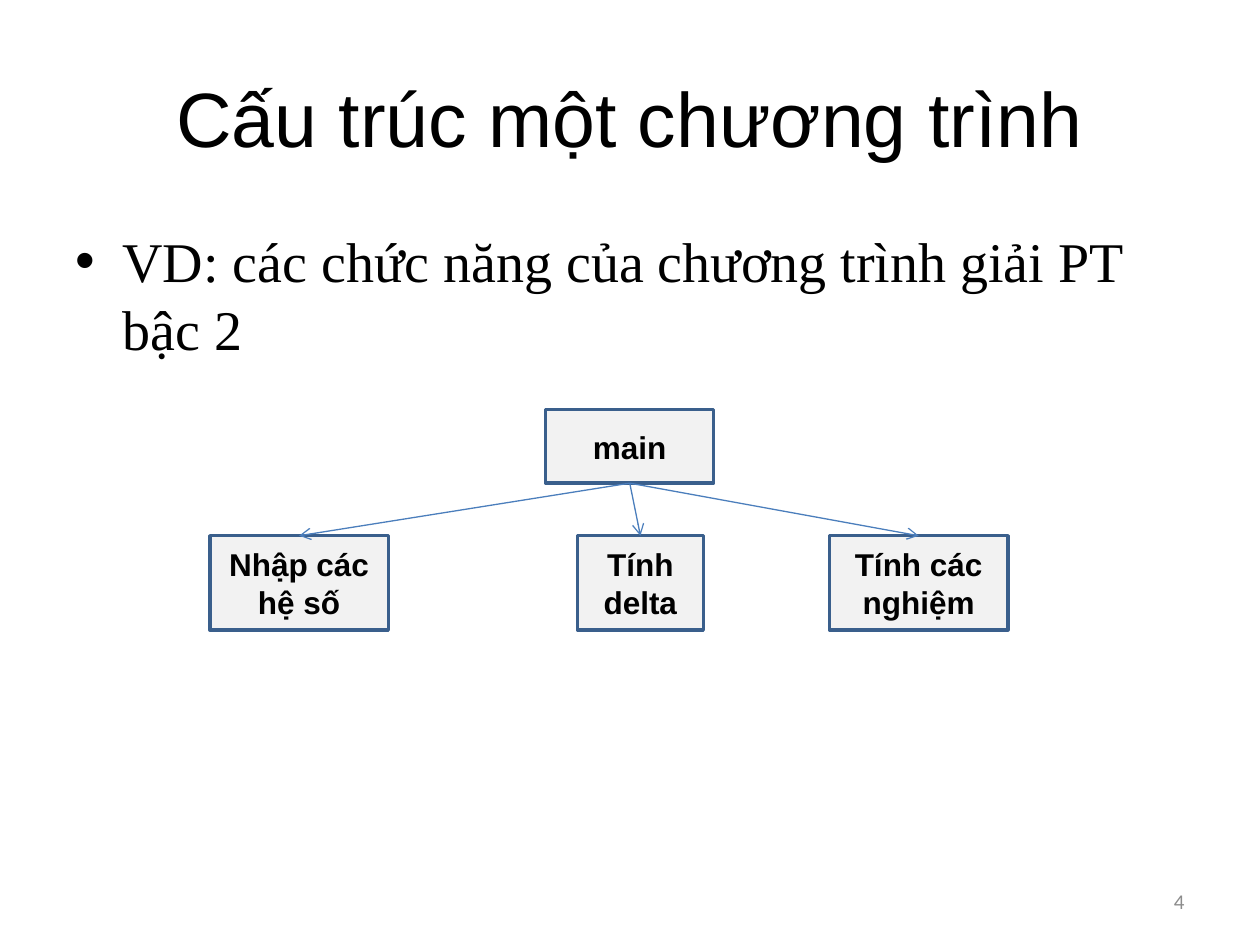
import pptx
import pptx.util
import pptx.dml.color
import pptx.enum.shapes
import pptx.enum.text
import pptx.oxml.xmlchemy
from pptx.util import Cm

BLACK = pptx.dml.color.RGBColor(0x00, 0x00, 0x00)
GRAY = pptx.dml.color.RGBColor(0x8C, 0x8C, 0x8C)
BOX_FILL = pptx.dml.color.RGBColor(0xF2, 0xF2, 0xF2)
BOX_LINE = pptx.dml.color.RGBColor(0x3A, 0x5F, 0x8C)
ARROW_LINE = pptx.dml.color.RGBColor(0x4B, 0x7E, 0xBC)

ALIGN = pptx.enum.text.PP_ALIGN
ANCHOR = pptx.enum.text.MSO_ANCHOR
BOTTOM_SITE, TOP_SITE = 2, 0

FUNCTION_TOP, FUNCTION_HEIGHT = 10.8, 1.9
FUNCTIONS = [
    ("Nhập các hệ số", 4.23, 3.6),
    ("Tính delta", 11.64, 2.54),
    ("Tính các nghiệm", 16.72, 3.6),
]


def append_element(parent, tag, **attributes):
    element = pptx.oxml.xmlchemy.OxmlElement(tag)
    for key, value in attributes.items():
        element.set(key, value)
    parent.append(element)


def write(shape, text, size, font, color=BLACK, align=ALIGN.CENTER,
          anchor=ANCHOR.MIDDLE, bold=False):
    frame = shape.text_frame
    frame.text = text
    frame.word_wrap = True
    frame.vertical_anchor = anchor
    paragraph = frame.paragraphs[0]
    paragraph.alignment = align
    style = paragraph.runs[0].font
    style.size = pptx.util.Pt(size)
    style.name = font
    style.bold = bold
    style.color.rgb = color
    return paragraph


def add_title(slide, text):
    title = slide.shapes.title
    title.left, title.top, title.width, title.height = Cm(1.27), Cm(0.76), Cm(22.86), Cm(3.18)
    write(title, text, 44, "Arial")


def add_bullet(slide, text):
    body = slide.shapes.add_textbox(Cm(1.27), Cm(4.45), Cm(22.86), Cm(12.57))
    paragraph = write(body, text, 32, "Times New Roman", align=ALIGN.LEFT, anchor=ANCHOR.TOP)
    paragraph.space_before = pptx.util.Pt(6.4)
    properties = paragraph._p.get_or_add_pPr()
    properties.set("marL", str(Cm(0.95)))
    properties.set("indent", str(-Cm(0.95)))
    append_element(properties, "a:buFont", typeface="Arial")
    append_element(properties, "a:buChar", char="•")


def add_box(slide, text, left, top, width, height):
    box = slide.shapes.add_shape(pptx.enum.shapes.MSO_SHAPE.RECTANGLE,
                                 Cm(left), Cm(top), Cm(width), Cm(height))
    box.shadow.inherit = False
    box.fill.solid()
    box.fill.fore_color.rgb = BOX_FILL
    box.line.color.rgb = BOX_LINE
    box.line.width = pptx.util.Pt(2)
    write(box, text, 18, "Arial", bold=True)
    return box


def add_arrow(slide, caller, function):
    arrow = slide.shapes.add_connector(pptx.enum.shapes.MSO_CONNECTOR.STRAIGHT, 0, 0, 0, 0)
    arrow.begin_connect(caller, BOTTOM_SITE)
    arrow.end_connect(function, TOP_SITE)
    arrow.line.color.rgb = ARROW_LINE
    arrow.line.width = pptx.util.Pt(0.75)
    append_element(arrow.line._get_or_add_ln(), "a:tailEnd", type="arrow")
    append_element(arrow._element.spPr, "a:effectLst")


def add_page_number(slide, number):
    page_number = slide.shapes.add_textbox(Cm(18.2), Cm(17.65), Cm(5.93), Cm(1.02))
    write(page_number, number, 12, "Calibri", color=GRAY, align=ALIGN.RIGHT)


def main():
    presentation = pptx.Presentation()
    presentation.slide_width, presentation.slide_height = Cm(25.4), Cm(19.05)
    slide = presentation.slides.add_slide(presentation.slide_layouts[5])
    add_title(slide, "Cấu trúc một chương trình")
    add_bullet(slide, "VD: các chức năng của chương trình giải PT bậc 2")
    main_box = add_box(slide, "main", 11, 8.26, 3.39, 1.48)
    function_boxes = [add_box(slide, text, left, FUNCTION_TOP, width, FUNCTION_HEIGHT)
                      for text, left, width in FUNCTIONS]
    for function_box in function_boxes:
        add_arrow(slide, main_box, function_box)
    add_page_number(slide, "4")
    presentation.save("out.pptx")


if __name__ == "__main__":
    main()
